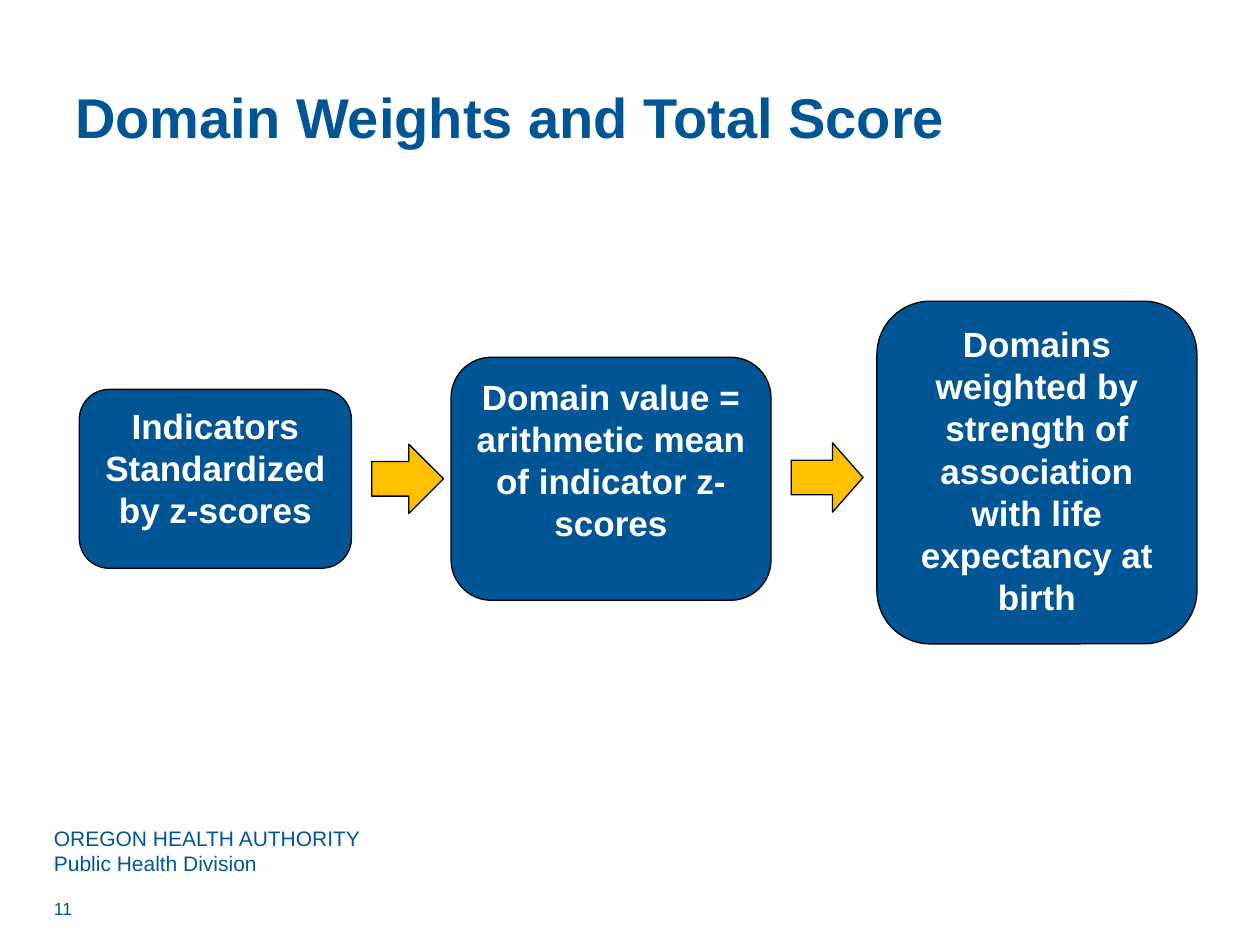
from pptx import Presentation
from pptx.dml.color import RGBColor
from pptx.enum.shapes import MSO_SHAPE
from pptx.enum.text import MSO_ANCHOR, PP_ALIGN
from pptx.util import Inches, Pt

BLUE, GOLD, BLACK, WHITE = "005595", "FFC000", "000000", "FFFFFF"

TITLE = "Domain Weights and Total Score"
FOOTER = "OREGON HEALTH AUTHORITY\vPublic Health Division"
PAGE_NUMBER = "11"

# left, middle, width, height, paragraphs
STEPS = [
    (0.63, 3.8, 2.16, 1.42, ["Indicators", "Standardized by z-scores"]),
    (3.58, 3.8, 2.54, 1.93, ["Domain value = arithmetic mean of indicator z-scores"]),
    (6.96, 3.75, 2.54, 2.72, ["Domains weighted by strength of association with life expectancy at birth"]),
]
# middle, share of the height taken by the head
ARROWS = [(3.8, 0.5), (3.79, 0.44)]
ARROW_WIDTH, ARROW_HEIGHT, ARROW_GAP = 0.57, 0.55, 0.16


def color(value):
    return RGBColor.from_string(value)


def write(shape, paragraphs, size, ink=BLUE, bold=False,
          align=PP_ALIGN.LEFT, anchor=MSO_ANCHOR.TOP):
    frame = shape.text_frame
    frame.word_wrap = True
    frame.vertical_anchor = anchor
    for index, text in enumerate(paragraphs):
        para = frame.add_paragraph() if index else frame.paragraphs[0]
        para.text = text
        para.alignment = align
        for span in para.runs:
            span.font.name = "Arial"
            span.font.size = Pt(size)
            span.font.bold = bold
            span.font.color.rgb = color(ink)


def add_text(page, text, left, top, width, height, size, **style):
    box = page.shapes.add_textbox(*map(Inches, (left, top, width, height)))
    write(box, [text], size, **style)


def add_block(page, kind, left, middle, width, height, fill):
    block = page.shapes.add_shape(
        kind, *map(Inches, (left, middle - height / 2, width, height)))
    block.shadow.inherit = False
    block.fill.solid()
    block.fill.fore_color.rgb = color(fill)
    block.line.color.rgb = color(BLACK)
    block.line.width = Pt(0.75)
    return block


def main():
    deck = Presentation()
    deck.slide_width, deck.slide_height = Inches(10), Inches(7.5)
    page = deck.slides.add_slide(deck.slide_layouts[6])

    add_text(page, FOOTER, 0.33, 6.5, 3.83, 0.52, 12)
    add_text(page, PAGE_NUMBER, 0.33, 7.08, 2.33, 0.27, 10)
    add_text(page, TITLE, 0.5, 0.3, 9, 1.25, 32, bold=True, anchor=MSO_ANCHOR.MIDDLE)

    for left, middle, width, height, paragraphs in STEPS:
        step = add_block(page, MSO_SHAPE.ROUNDED_RECTANGLE, left, middle, width, height, BLUE)
        write(step, paragraphs, 20, ink=WHITE, bold=True, align=PP_ALIGN.CENTER)

    for (left, _, width, _, _), (middle, head) in zip(STEPS, ARROWS):
        arrow = add_block(page, MSO_SHAPE.RIGHT_ARROW, left + width + ARROW_GAP, middle,
                          ARROW_WIDTH, ARROW_HEIGHT, GOLD)
        arrow.adjustments[1] = head

    deck.save("out.pptx")


if __name__ == "__main__":
    main()
